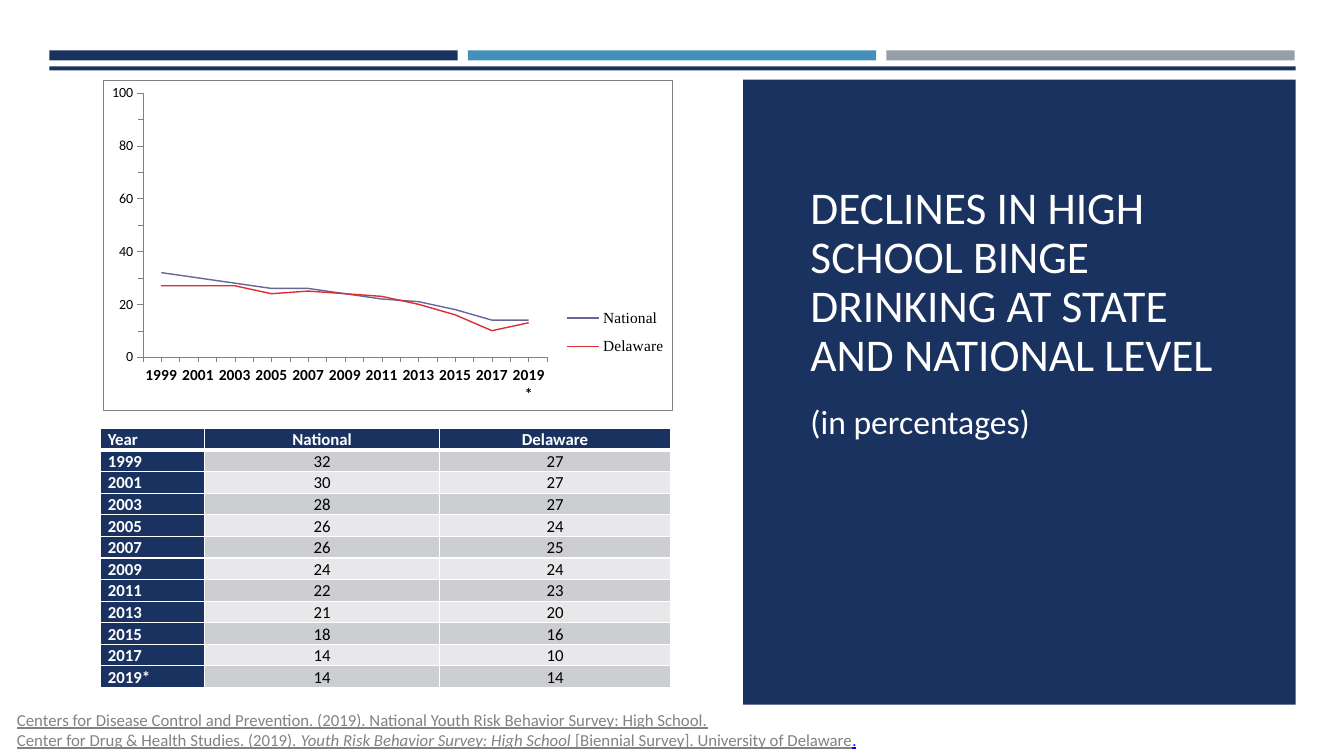
from pptx import Presentation, util as u
from pptx.chart.data import CategoryChartData
from pptx.dml.color import RGBColor
from pptx.enum import chart as ch, shapes, text
from pptx.oxml import parse_xml
from pptx.oxml.ns import nsdecls, qn

# Content
NAVY, BLUE, GREY, WHITE, BLACK = "1A3260", "4590B8", "969FA7", "FFFFFF", "000000"
AXIS_GREY, SOURCE_GREY = "808080", "828282"
BANDS = ("CDCED2", "E8E8EA")
TITLE = "DECLINES IN HIGH SCHOOL BINGE DRINKING AT STATE AND NATIONAL LEVEL"
SUBTITLE = "(in percentages)"
YEARS = [str(year) for year in range(1999, 2019, 2)] + ["2019*"]
NATIONAL = [32, 30, 28, 26, 26, 24, 22, 21, 18, 14, 14]
DELAWARE = [27, 27, 27, 24, 25, 24, 23, 20, 16, 10]
TRENDS = [("National ", NATIONAL, "666699"),
          ("Delaware", DELAWARE + [13], "DD2D32")]
TABLE_ROWS = [("Year", "National", "Delaware"),
              *zip(YEARS, NATIONAL, DELAWARE + [14])]
COLUMN_WIDTHS = (1.03, 2.33, 2.29)
# Source runs: text, colour, italic
SOURCES = [
    [("Centers for Disease Control and Prevention. (2019). National Youth Risk "
      "Behavior Survey: High School.", SOURCE_GREY, False)],
    [("Center for Drug & Health Studies. (2019).", SOURCE_GREY, False),
     (" Youth Risk Behavior Survey: High School ", SOURCE_GREY, True),
     ("[Biennial Survey]. University of Delaware", SOURCE_GREY, False),
     (".", "0000FF", False)],
]
# Left, top, width, height, colour
BLOCKS = [
    *[(0.49 + i * 4.15, 0.5, 4.05, 0.1, color)
      for i, color in enumerate((NAVY, BLUE, GREY))],
    (0.49, 0.66, 12.36, 0.04, NAVY),
    (7.37, 0.79, 5.48, 6.2, NAVY),
]


def rgb(value):
    return RGBColor.from_string(value)


def box(*lengths):
    return [u.Inches(length) for length in lengths]


def add_run(paragraph, words, size, color, bold=False, italic=False, underline=False):
    run = paragraph.add_run()
    run.text = words
    font = run.font
    font.name, font.size, font.color.rgb = "Calibri", u.Pt(size), rgb(color)
    font.bold, font.italic, font.underline = bold, italic, underline


def add_frame(slide, *place):
    frame = slide.shapes.add_textbox(*box(*place)).text_frame
    frame.word_wrap = True
    return frame


def solid(color):
    return f'<a:solidFill><a:srgbClr val="{color}"/></a:solidFill>'


def area_style(line):
    return parse_xml(f'<c:spPr {nsdecls("c", "a")}>{solid(WHITE)}{line}</c:spPr>')


def manual_layout(x, y, w, h, inner=False):
    target = '<c:layoutTarget val="inner"/>' if inner else ""
    values = "".join(f'<c:{key} val="{val}"/>'
                     for key, val in zip("xywh", (x, y, w, h)))
    return parse_xml(
        f'<c:layout {nsdecls("c")}><c:manualLayout>{target}<c:xMode val="edge"/>'
        f'<c:yMode val="edge"/>{values}</c:manualLayout></c:layout>')


def add_trend_chart(slide):
    data = CategoryChartData()
    data.categories = YEARS
    for name, values, _ in TRENDS:
        data.add_series(name, values)
    chart = slide.shapes.add_chart(
        ch.XL_CHART_TYPE.LINE, *box(1.02, 0.79, 5.65, 3.28), data).chart
    chart.has_title = False
    chart.font.name, chart.font.size = "Calibri", u.Pt(10)
    chart.font.color.rgb = rgb(BLACK)
    chart.plots[0].vary_by_categories = False
    for series, (_, _, color) in zip(chart.plots[0].series, TRENDS):
        series.smooth = False
        series.marker.style = ch.XL_MARKER_STYLE.NONE
        series.format.line.color.rgb = rgb(color)
        series.format.line.width = u.Pt(1)

    # Axes
    years, percent = chart.category_axis, chart.value_axis
    for axis, size, bold in ((years, 11, True), (percent, 10, False)):
        axis.has_major_gridlines = False
        axis.minor_tick_mark = ch.XL_TICK_MARK.OUTSIDE
        axis.format.line.color.rgb = rgb(AXIS_GREY)
        axis.format.line.width = u.Pt(0.25)
        axis.tick_labels.font.size = u.Pt(size)
        axis.tick_labels.font.bold = bold
    years.major_tick_mark = ch.XL_TICK_MARK.NONE
    percent.major_tick_mark = ch.XL_TICK_MARK.OUTSIDE
    percent.minimum_scale, percent.maximum_scale = 0, 100
    percent.major_unit, percent.minor_unit = 20, 10

    # Legend
    chart.has_legend = True
    legend = chart.legend
    legend.position = ch.XL_LEGEND_POSITION.RIGHT
    legend.include_in_layout = False
    legend.font.name, legend.font.size = "Times New Roman", u.Pt(11)

    # Plot placement, backgrounds and border
    root = chart.element
    plot_area = root.find(".//" + qn("c:plotArea"))
    key = root.find(".//" + qn("c:legend"))
    for part in (plot_area, key):
        for layout in part.findall(qn("c:layout")):
            part.remove(layout)
    plot_area.insert(0, manual_layout(0.07, 0.04, 0.71, 0.8, inner=True))
    key.find(qn("c:legendPos")).addnext(manual_layout(0.81, 0.66, 0.18, 0.21))
    plot_area.append(area_style("<a:ln><a:noFill/></a:ln>"))
    border = f'<a:ln w="{u.Pt(0.25)}">{solid(AXIS_GREY)}</a:ln>'
    root.find(qn("c:chart")).addnext(area_style(border))


def set_borders(cell, top, bottom):
    tc_pr = cell._tc.get_or_add_tcPr()
    for i, (side, width) in enumerate(zip("LRTB", (1, 1, top, bottom))):
        tc_pr.insert(i, parse_xml(
            f'<a:ln{side} {nsdecls("a")} w="{u.Pt(width)}">{solid(WHITE)}</a:ln{side}>'))


def add_percent_table(slide):
    table = slide.shapes.add_table(
        len(TABLE_ROWS), len(COLUMN_WIDTHS), *box(1, 4.25, 5.65, 2.57)).table
    for column, width in zip(table.columns, COLUMN_WIDTHS):
        column.width = u.Inches(width)
    for r, values in enumerate(TABLE_ROWS):
        for c, value in enumerate(values):
            cell = table.cell(r, c)
            heading = r == 0 or c == 0
            cell.margin_left = cell.margin_right = u.Inches(0.07)
            cell.margin_top = cell.margin_bottom = 0
            anchor = text.MSO_ANCHOR.TOP if heading else text.MSO_ANCHOR.BOTTOM
            cell.vertical_anchor = anchor
            cell.fill.solid()
            cell.fill.fore_color.rgb = rgb(NAVY if heading else BANDS[(r - 1) % 2])
            paragraph = cell.text_frame.paragraphs[0]
            paragraph.alignment = text.PP_ALIGN.CENTER if c else text.PP_ALIGN.JUSTIFY
            paragraph.line_spacing = 1.07
            add_run(paragraph, str(value), 12, WHITE if heading else BLACK, bold=heading)
            set_borders(cell, 3 if r == 1 else 1, 3 if r == 0 else 1)


def main():
    deck = Presentation()
    deck.slide_width, deck.slide_height = box(13.33, 7.5)
    slide = deck.slides.add_slide(deck.slide_layouts[6])

    # Header bars and title panel
    for *place, color in BLOCKS:
        block = slide.shapes.add_shape(shapes.MSO_SHAPE.RECTANGLE, *box(*place))
        block.shadow.inherit = False
        block.fill.solid()
        block.fill.fore_color.rgb = rgb(color)
        block.line.fill.background()

    # Title and subtitle
    title = add_frame(slide, 7.94, 1.55, 4.5, 2.28)
    title.vertical_anchor = text.MSO_ANCHOR.BOTTOM
    title.paragraphs[0].line_spacing = 0.9
    add_run(title.paragraphs[0], TITLE, 32.4, WHITE)
    subtitle = add_frame(slide, 7.94, 3.93, 2.8, 0.5)
    add_run(subtitle.paragraphs[0], SUBTITLE, 24, WHITE)

    add_trend_chart(slide)
    add_percent_table(slide)

    # Sources
    sources = add_frame(slide, 0.07, 6.99, 9.13, 0.5)
    for i, runs in enumerate(SOURCES):
        paragraph = sources.add_paragraph() if i else sources.paragraphs[0]
        for words, color, italic in runs:
            add_run(paragraph, words, 12, color, italic=italic, underline=True)

    deck.save("out.pptx")


if __name__ == "__main__":
    main()
